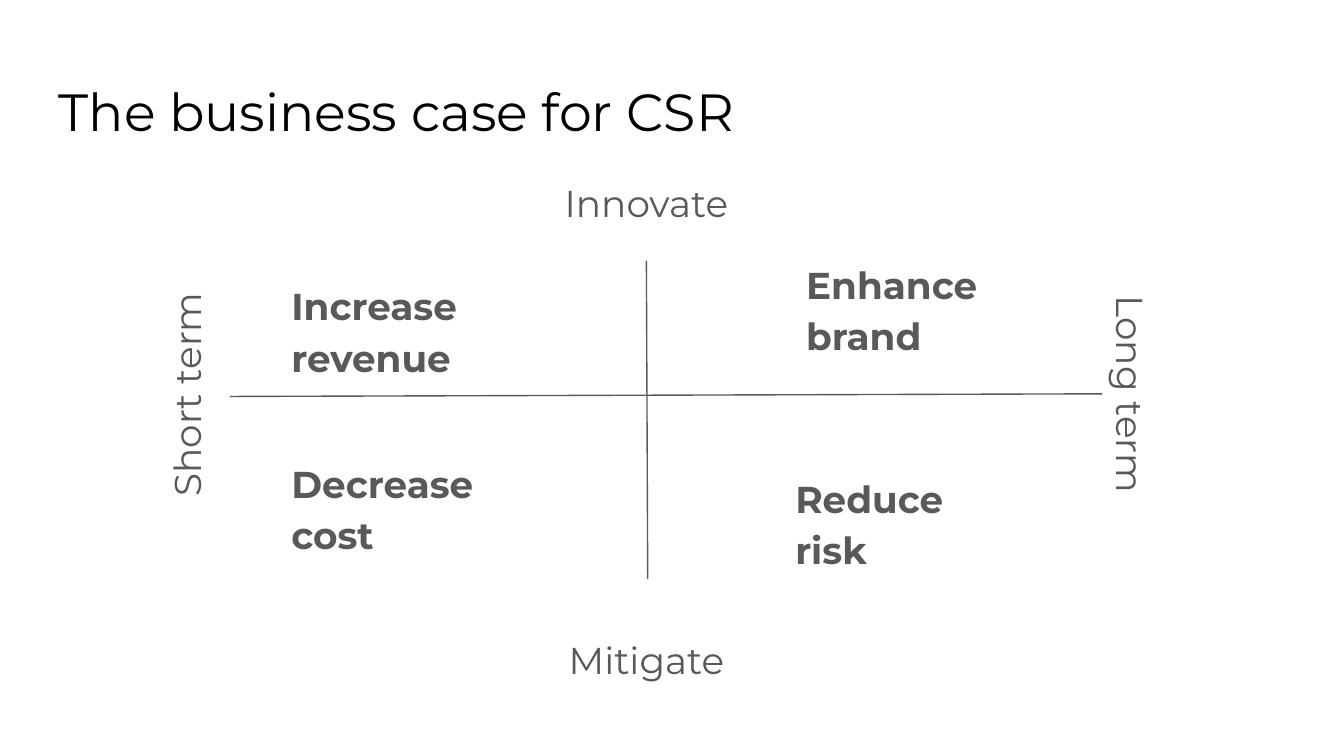
from dataclasses import dataclass

from lxml import etree
from pptx import Presentation
from pptx import util as u
from pptx.dml.color import RGBColor
from pptx.enum import shapes, text
from pptx.oxml.ns import qn


@dataclass(frozen=True)
class Theme:
    font: str = "Montserrat"
    ink: RGBColor = RGBColor(0, 0, 0)
    gray: RGBColor = RGBColor(0x59, 0x59, 0x59)
    head: float = 28
    body: float = 20
    inset: float = 7.2
    rule: float = 0.75
    lead: float = 1.15


class Deck:
    def __init__(self, slide, theme):
        self.slide = slide
        self.theme = theme

    def words(self, box, lines, size, color, bold=False, center=False,
              lead=None, turn=0):
        shape = self.slide.shapes.add_textbox(*map(u.Pt, box))
        shape.rotation = turn
        frame = shape.text_frame
        frame.word_wrap = True
        frame.vertical_anchor = text.MSO_ANCHOR.TOP
        inset = u.Pt(self.theme.inset)
        frame.margin_left = frame.margin_right = inset
        frame.margin_top = frame.margin_bottom = inset
        for i, line in enumerate(lines):
            para = frame.add_paragraph() if i else frame.paragraphs[0]
            para.alignment = text.PP_ALIGN.CENTER if center else text.PP_ALIGN.LEFT
            if lead:
                para.line_spacing = lead
            run = para.add_run()
            run.text = line
            font = run.font
            font.name, font.size, font.bold = self.theme.font, u.Pt(size), bold
            font.color.rgb = color

    def title(self, box, line):
        self.words(box, [line], self.theme.head, self.theme.ink)

    def benefit(self, box, lines):
        t = self.theme
        self.words(box, lines, t.body, t.gray, bold=True, lead=t.lead)

    def label(self, box, line, turn=0):
        t = self.theme
        self.words(box, [line], t.body, t.gray, center=True, lead=t.lead,
                   turn=turn)

    def axis(self, *ends):
        line = self.slide.shapes.add_connector(
            shapes.MSO_CONNECTOR.STRAIGHT, *map(u.Pt, ends))
        line.line.color.rgb = self.theme.gray
        line.line.width = u.Pt(self.theme.rule)
        etree.SubElement(line._element.spPr, qn("a:effectLst"))


def main():
    prs = Presentation()
    prs.slide_width, prs.slide_height = u.Pt(720), u.Pt(405)
    deck = Deck(prs.slides.add_slide(prs.slide_layouts[6]), Theme())
    size = (197.3, 38.2)

    # Title
    deck.title((24.5, 35.3, 671, 45.4), "The business case for CSR")

    # Benefits in the four quadrants
    left = 149
    for x, y, lines in (
        (left, 141.1, ("Increase", "revenue")),
        (left, 236.2, ("Decrease", "cost")),
        (424.8, 129.6, ("Enhance", "brand")),
        (419, 244.1, ("Reduce", "risk")),
    ):
        deck.benefit((x, y, *size), lines)

    # Crossing axes
    deck.axis(346.3, 139.7, 347, 310.3)
    deck.axis(123.1, 212.4, 590.4, 211)

    # Labels at the axis ends
    mid, row = 247.7, 192.2
    for x, y, line, turn in (
        (mid, 85.7, "Innovate", 0),
        (mid, 330.5, "Mitigate", 0),
        (-2.2, row, "Short term", 270),
        (511.2, row, "Long term", 90),
    ):
        deck.label((x, y, *size), line, turn)

    prs.save("out.pptx")


if __name__ == "__main__":
    main()
